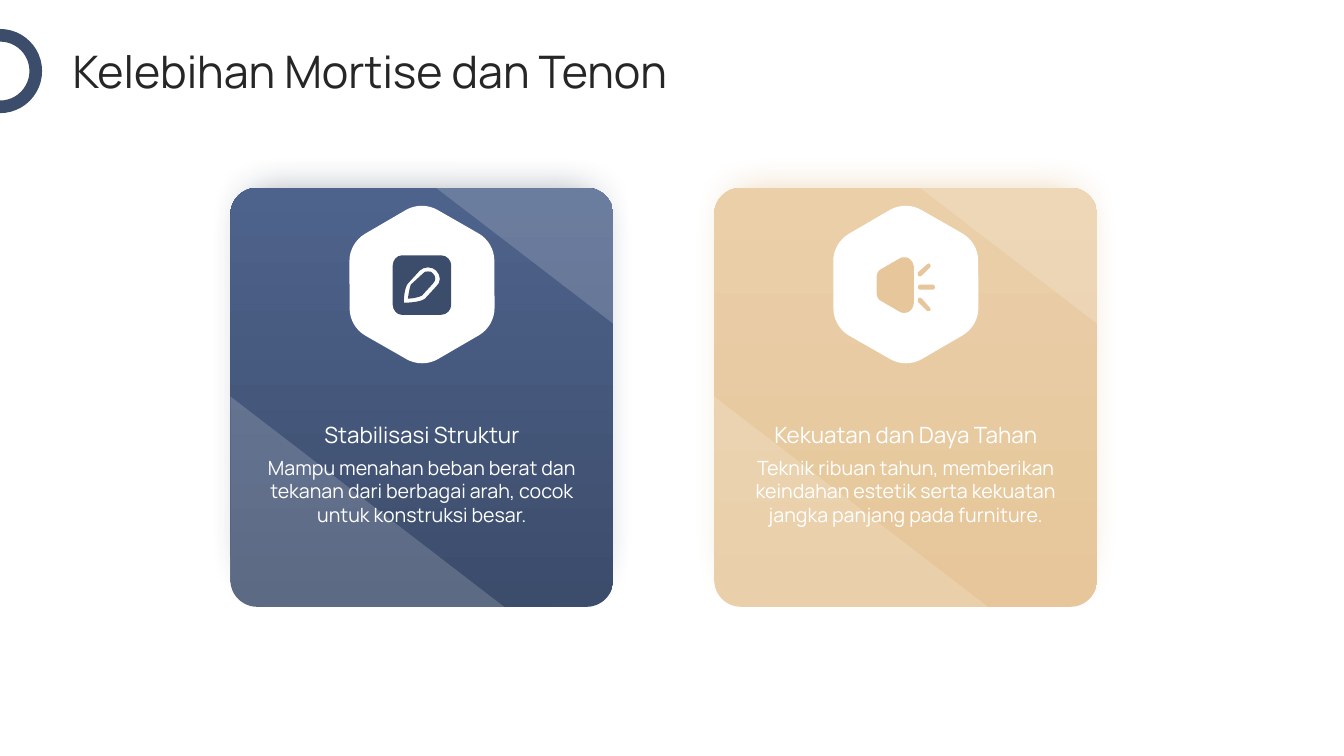
import math

import lxml.etree
import pptx
import pptx.dml.color
import pptx.enum.shapes
import pptx.enum.text
import pptx.oxml.ns
import pptx.util

RGBColor = pptx.dml.color.RGBColor
Align = pptx.enum.text.PP_ALIGN
Anchor = pptx.enum.text.MSO_ANCHOR
Preset = pptx.enum.shapes.MSO_SHAPE
qn = pptx.oxml.ns.qn

NAVY = RGBColor(0x3C, 0x4C, 0x6B)
NAVY_LIGHT = RGBColor(0x4E, 0x63, 0x8C)
NAVY_SHADOW = RGBColor(0x2D, 0x39, 0x50)
SAND = RGBColor(0xE6, 0xC6, 0x9A)
SAND_LIGHT = RGBColor(0xEA, 0xCF, 0xA9)
SAND_SHADOW = RGBColor(0xD3, 0x9B, 0x4D)
WHITE = RGBColor(0xFF, 0xFF, 0xFF)
INK = RGBColor(0x26, 0x26, 0x26)
FONT = "Manrope"

# Grid: 100 columns or rows to the inch
CELL = 9144
CARD_LEFT, CARD_TOP, CARD_WIDTH, CARD_HEIGHT = 228.6, 186.3, 380, 415.7
CARD_PITCH = 480
HEXAGON_DROP = 96

# Outlines in grid cells: M moves, L draws a line, C draws a curve
TOP_FACET = "M 204 0 L 353 0 C 368 0 380 8 380 19 L 380 135"
BOTTOM_FACET = "M 0 207 L 272 416 L 26 416 C 12 416 0 407 0 397"
PEN = (
    "M 35 16 C 37 16 39 16 40 18 C 43 21 43 25 40 28 L 29 40 "
    "C 27 41 21 43 15 43 C 16 37 17 31 18 29 L 30 18 C 31 16 33 16 35 16 "
    "M 35 12 C 32 12 29 13 27 15 L 16 27 C 11 31 11 47 11 47 "
    "C 11 47 27 47 32 43 L 43 31 C 48 27 48 20 43 15 C 41 13 38 12 35 12 "
    "M 9 0 L 48 0 C 54 0 58 5 58 10 L 58 49 C 58 54 54 59 48 59 "
    "L 9 59 C 4 59 0 54 0 49 L 0 10 C 0 5 4 0 9 0"
)
SPEAKER = (
    "M 43 40 C 44 40 44 41 45 41 L 53 50 C 54 51 54 52 53 53 "
    "C 53 53 52 53 52 53 C 51 53 51 53 50 53 L 41 44 "
    "C 41 43 41 42 41 41 C 42 41 42 40 43 40 "
    "M 43 27 L 56 27 C 57 27 58 28 58 30 C 58 31 57 32 56 32 "
    "L 43 32 C 42 32 41 31 41 30 C 41 28 42 27 43 27 "
    "M 52 6 C 52 6 53 6 53 7 C 54 7 54 9 53 10 L 45 18 C 44 19 44 19 43 19 "
    "C 42 19 42 19 41 18 C 41 17 41 16 41 15 L 50 7 C 51 6 51 6 52 6 "
    "M 27 0 C 29 0 31 0 32 1 C 35 3 37 6 37 9 L 37 46 C 37 49 35 52 32 54 "
    "C 31 55 29 55 27 55 C 26 55 24 55 23 54 L 4 43 C 2 42 0 39 0 35 "
    "L 0 20 C 0 16 2 13 4 12 L 23 1 C 24 0 26 0 27 0"
)

CARDS = [
    dict(heading="Stabilisasi Struktur",
         body="Mampu menahan beban berat dan tekanan dari berbagai arah, "
              "cocok untuk konstruksi besar.",
         dark=NAVY, light=NAVY_LIGHT, shadow=NAVY_SHADOW,
         icon=PEN, icon_at=(161, 67)),
    dict(heading="Kekuatan dan Daya Tahan",
         body="Teknik ribuan tahun, memberikan keindahan estetik serta "
              "kekuatan jangka panjang pada furniture.",
         dark=SAND, light=SAND_LIGHT, shadow=SAND_SHADOW,
         icon=SPEAKER, icon_at=(161, 69)),
]


def cells(*counts):
    return [pptx.util.Emu(round(count * CELL)) for count in counts]


def read_outline(outline):
    """Turn an outline string into (command, points) pairs."""
    tokens = iter(outline.split())
    return [(command, [(float(next(tokens)), float(next(tokens)))
                       for _ in range(3 if command == "C" else 1)])
            for command in tokens]


def rounded_hexagon(radius=83, cut=18, control=7):
    corners = [(radius * math.cos(k * math.pi / 3), radius * math.sin(k * math.pi / 3))
               for k in range(6)]

    def toward(start, end, distance):
        return tuple(a + (b - a) * distance / radius for a, b in zip(start, end))

    steps = []
    for k, corner in enumerate(corners):
        before, after = corners[k - 1], corners[(k + 1) % 6]
        steps.append(("L" if k else "M", [toward(corner, before, cut)]))
        steps.append(("C", [toward(corner, before, control),
                            toward(corner, after, control),
                            toward(corner, after, cut)]))
    return steps


def add_outline(slide, steps, left, top, color, alpha=None, turn=0):
    placed = [(command, [cells(left + x, top + y) for x, y in points])
              for command, points in steps]
    builder = slide.shapes.build_freeform(*placed[0][1][0], scale=1.0)
    for index, (command, points) in enumerate(placed):
        if command != "M":
            last = index + 1 == len(placed) or placed[index + 1][0] == "M"
            builder.add_line_segments(points, close=last)
        elif index:
            builder.move_to(*points[0])
    figure = builder.convert_to_shape()
    # Join the three points of each curve into one cubic segment
    segments = iter(list(figure._element.iter(qn("a:lnTo"))))
    for command, points in placed:
        if command == "M":
            continue
        parts = [next(segments) for _ in points]
        if command == "C":
            cubic = lxml.etree.Element(qn("a:cubicBezTo"))
            parts[0].addprevious(cubic)
            for part in parts:
                cubic.append(part[0])
                part.getparent().remove(part)
    figure.rotation = turn
    figure.shadow.inherit = False
    figure.line.fill.background()
    figure.fill.solid()
    figure.fill.fore_color.rgb = color
    if alpha:
        tint = figure._element.spPr.find(qn("a:solidFill"))[0]
        lxml.etree.SubElement(tint, qn("a:alpha"), val=str(alpha * 1000))


def add_label(slide, box, words, size, color, align=Align.CENTER,
              anchor=Anchor.TOP, inset=None):
    frame = slide.shapes.add_textbox(*cells(*box)).text_frame
    frame.word_wrap = True
    frame.vertical_anchor = anchor
    if inset is not None:
        frame.margin_left = frame.margin_right = inset
        frame.margin_top = frame.margin_bottom = inset
    paragraph = frame.paragraphs[0]
    paragraph.alignment = align
    run = paragraph.add_run()
    run.text = words
    run.font.name = FONT
    run.font.size = pptx.util.Pt(size)
    run.font.color.rgb = color


def add_panel(slide, left, dark, light, glow):
    panel = slide.shapes.add_shape(Preset.ROUNDED_RECTANGLE,
                                   *cells(left, CARD_TOP, CARD_WIDTH, CARD_HEIGHT))
    panel.adjustments[0] = 0.07
    panel.line.fill.background()
    panel.fill.gradient()
    panel.fill.gradient_angle = 90
    for stop, position, color in zip(panel.fill.gradient_stops, (0, 1), (dark, light)):
        stop.position = position
        stop.color.rgb = color
    # Soft shadow, smaller than the panel and aligned to its top
    panel.shadow.inherit = False
    effects = panel._element.spPr.find(qn("a:effectLst"))
    shadow = lxml.etree.SubElement(
        effects, qn("a:outerShdw"), blurRad=str(pptx.util.Pt(26)),
        dist=str(pptx.util.Pt(2)), dir="5400000", sx="92000", sy="92000",
        algn="t", rotWithShape="0")
    tint = lxml.etree.SubElement(shadow, qn("a:srgbClr"), val=str(glow))
    lxml.etree.SubElement(tint, qn("a:alpha"), val="43000")


def add_card(slide, left, card):
    add_panel(slide, left, card["dark"], card["light"], card["shadow"])
    for facet in (TOP_FACET, BOTTOM_FACET):
        add_outline(slide, read_outline(facet), left, CARD_TOP, WHITE, alpha=17)
    add_outline(slide, rounded_hexagon(), left + CARD_WIDTH / 2,
                CARD_TOP + HEXAGON_DROP, WHITE, turn=29.8)


def add_card_text(slide, left, card):
    add_label(slide, (left + 25.5, 447, 329, 140), card["body"], 14, WHITE)
    add_label(slide, (left + 25.5, 376, 329, 73), card["heading"], 16, WHITE,
              anchor=Anchor.BOTTOM)


def add_icon(slide, left, card):
    across, down = card["icon_at"]
    add_outline(slide, read_outline(card["icon"]), left + across,
                CARD_TOP + down, card["dark"])


def add_ring(slide):
    ring = slide.shapes.add_shape(Preset.OVAL, *cells(-35.5, 35, 71, 71))
    ring.shadow.inherit = False
    ring.fill.background()
    ring.line.color.rgb = NAVY
    ring.line.width = pptx.util.Pt(9)


def main():
    deck = pptx.Presentation()
    deck.slide_width, deck.slide_height = cells(1333.33, 750)
    slide = deck.slides.add_slide(deck.slide_layouts[6])
    # Cards, then their texts, then their icons
    for add_part in (add_card, add_card_text, add_icon):
        for index, card in enumerate(CARDS):
            add_part(slide, CARD_LEFT + index * CARD_PITCH, card)
    # Title with its ring
    add_ring(slide)
    add_label(slide, (72, 47, 1188, 47), "Kelebihan Mortise dan Tenon", 32, INK,
              align=Align.LEFT, anchor=Anchor.MIDDLE, inset=0)
    deck.save("out.pptx")


if __name__ == "__main__":
    main()
